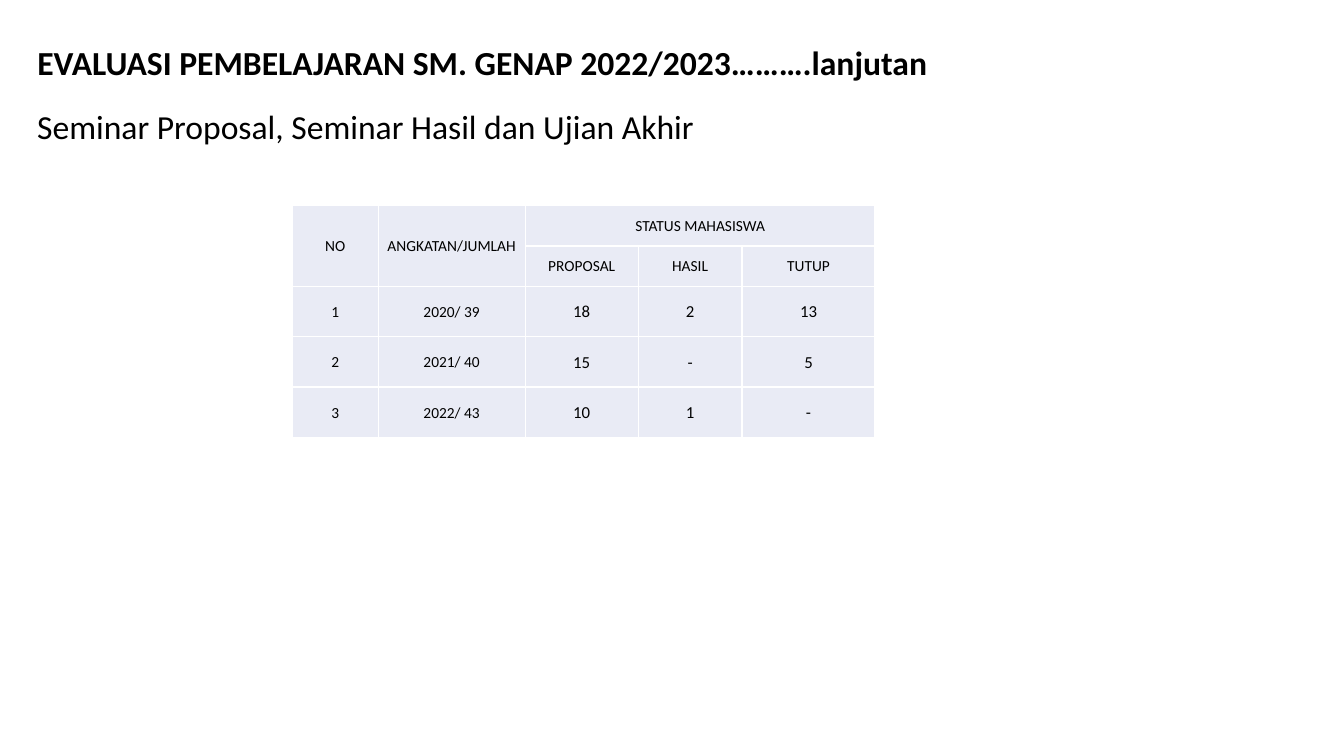
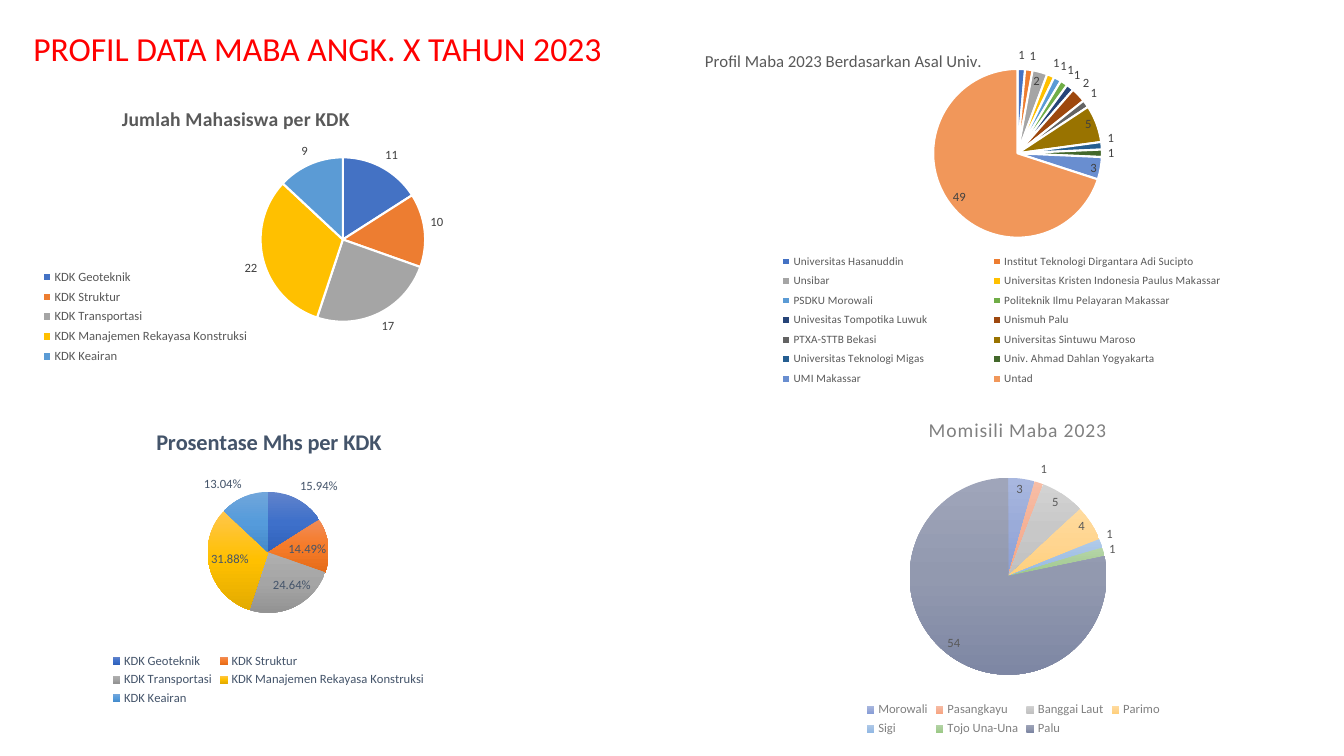
"""Build two slides: a seminar status table and four student profile pies."""
import dataclasses
import typing

import pptx
import pptx.chart.data
import pptx.dml.color
import pptx.enum.chart
import pptx.enum.text
import pptx.oxml
import pptx.oxml.ns
import pptx.util

Inches = pptx.util.Inches
Pt = pptx.util.Pt
Text = pptx.enum.text
Place = pptx.enum.chart.XL_LABEL_POSITION
Box = tuple[float, float, float, float]


@dataclasses.dataclass(frozen=True)
class Theme:
    font: str = "Calibri"
    black: str = "000000"
    white: str = "FFFFFF"
    red: str = "FF0000"
    cell: str = "E9EBF5"
    dark: str = "404040"
    gray: str = "595959"
    slate: str = "44546A"
    pale: str = "808080"
    head: float = 24
    label: float = 9
    small: float = 11
    value: float = 12


@dataclasses.dataclass(frozen=True)
class Pie:
    title: str
    box: Box
    names: tuple[str, ...]
    vals: tuple[float, ...]
    fills: tuple[str, ...]
    plot: Box
    spot: tuple[float, float]
    size: float
    ink: str
    tag: str
    bold: bool = False
    space: int = 0
    key: Box | None = None
    keysize: float = 9
    form: str = "0"
    pos: typing.Any = Place.BEST_FIT
    edge: bool = False


THEME = Theme()
KDK = ("KDK Geoteknik", "KDK Struktur", "KDK Transportasi",
       "KDK Manajemen Rekayasa Konstruksi", "KDK Keairan")
BASE = ("4472C4", "ED7D31", "A5A5A5", "FFC000", "5B9BD5")

PIES = (
    Pie("Jumlah Mahasiswa per KDK", (0.16, 0.86, 4.41, 2.89), KDK,
        (11, 10, 17, 22, 9), BASE, (0.55, 0.22, 0.37, 0.61), (0.23, 0.05),
        14, THEME.gray, THEME.dark, bold=True, key=(0.05, 0.61, 0.48, 0.36),
        pos=Place.OUTSIDE_END, edge=True),
    Pie("Prosentase Mhs per KDK", (0.16, 4.04, 5, 3), KDK,
        (0.1594, 0.1449, 0.2464, 0.3188, 0.1304),
        ("6183CB 3E70CA 3062BB", "F18C57 F67B28 E56C19",
         "AFAFAF A5A5A5 939393", "FFC64B FFC000 E3AB00",
         "71A6DB 559BDB 448ACA"),
        (0.38, 0.28, 0.24, 0.4), (0.27, 0.05), 16, THEME.slate, THEME.slate,
        bold=True, form="0.00%"),
    Pie("Profil Maba 2023 Berdasarkan Asal Univ.", (6.9, 0.32, 6.2, 3.64),
        ("Universitas Hasanuddin", "Institut Teknologi Dirgantara Adi Sucipto",
         "Unsibar", "Universitas Kristen Indonesia Paulus Makassar",
         "PSDKU Morowali", "Politeknik Ilmu Pelayaran Makassar",
         "Univesitas Tompotika Luwuk", "Unismuh Palu", "PTXA-STTB Bekasi",
         "Universitas Sintuwu Maroso", "Universitas Teknologi Migas",
         "Univ. Ahmad Dahlan Yogyakarta", "UMI Makassar", "Untad"),
        (1, 1, 2, 1, 1, 1, 1, 2, 1, 5, 1, 1, 3, 49),
        BASE + ("70AD47", "264478", "9E480E", "636363", "997300", "255E91",
                "43682B", "698ED0", "F1975A"),
        (0.09, 0.1, 0.85, 0.46), (0.01, 0.04), 12, THEME.gray, THEME.dark,
        key=(0.04, 0.59, 0.9, 0.39), keysize=8, edge=True),
    Pie("Momisili Maba 2023", (7.48, 3.96, 5.14, 3.38),
        ("Morowali", "Pasangkayu", "Banggai Laut", "Parimo", "Sigi",
         "Tojo Una-Una", "Palu"),
        (3, 1, 5, 4, 1, 1, 54),
        ("A8B7DF 9AABD9 889ED7", "F7BDA5 F5B196 F8A582",
         "D2D2D2 C8C8C8 C0C0C0", "FFDB9E FFD590 FFD07C",
         "B1CBE9 A3C1E5 93B9E4", "B5D5A7 AACE9A 9CC987",
         "9FA5BA 9299AF 7E87A4"),
        (0.3, 0.23, 0.38, 0.58), (0.33, 0.04), 14, THEME.pale, THEME.gray,
        space=50, form="General"),
)

COLS = (0.85, 1.46, 1.12, 1.03, 1.32)
ROWS = (0.4, 0.4, 0.5, 0.5, 0.5)
CELLS = (
    ("NO", "ANGKATAN/JUMLAH", "STATUS MAHASISWA", "", ""),
    ("", "", "PROPOSAL", "HASIL", "TUTUP"),
    ("1", "2020/ 39", "18", "2", "13"),
    ("2", "2021/ 40", "15", "-", "5"),
    ("3", "2022/ 43", "10", "1", "-"),
)
SPANS = (((0, 0), (1, 0)), ((0, 1), (1, 1)), ((0, 2), (0, 4)))


def rgb(code: str) -> pptx.dml.color.RGBColor:
    """Turn a hex code into a colour."""
    return pptx.dml.color.RGBColor.from_string(code)


def apply(item: typing.Any, values: dict[str, typing.Any]) -> None:
    """Set each format value on an object."""
    for name, value in values.items():
        setattr(item, name, value)


def ink(font: typing.Any, size: float, code: str, bold: bool = False) -> None:
    """Format a font."""
    apply(font, {"name": THEME.font, "size": Pt(size), "bold": bold})
    font.color.rgb = rgb(code)


def area(box: Box) -> tuple[int, ...]:
    """Convert a box to lengths."""
    return tuple(Inches(side) for side in box)


def write(shape: typing.Any, text: str, box: Box, code: str,
          bold: bool = False, gap: float = 0,
          anchor: typing.Any = Text.MSO_ANCHOR.MIDDLE) -> None:
    """Place and fill a heading."""
    apply(shape, dict(zip(("left", "top", "width", "height"), area(box))))
    frame = shape.text_frame
    frame.text = text
    apply(frame, {"word_wrap": True, "vertical_anchor": anchor,
                  "auto_size": Text.MSO_AUTO_SIZE.NONE})
    line = frame.paragraphs[0]
    apply(line, {"alignment": Text.PP_ALIGN.LEFT, "line_spacing": 0.9,
                 "space_before": Pt(gap)})
    ink(line.runs[0].font, THEME.head, code, bold)


def start(deck: typing.Any, text: str, box: Box, code: str,
          bold: bool = False) -> typing.Any:
    """Add a slide with its title."""
    slide = deck.slides.add_slide(deck.slide_layouts.get_by_name("Title Only"))
    write(slide.shapes.title, text, box, code, bold)
    return slide


def border(props: typing.Any) -> None:
    """Draw white borders around a cell."""
    space = pptx.oxml.ns.nsdecls("a")
    for spot, side in enumerate("LRTB"):
        props.insert(spot, pptx.oxml.parse_xml(
            f'<a:ln{side} {space} w="12700"><a:solidFill>'
            f'<a:srgbClr val="{THEME.white}"/></a:solidFill></a:ln{side}>'))


def grid(slide: typing.Any) -> None:
    """Draw the status table."""
    box = area((2.9, 2.04, sum(COLS), sum(ROWS)))
    frame = slide.shapes.add_table(len(ROWS), len(COLS), *box)
    table = frame.table
    apply(table, {"first_row": False, "horz_banding": False})
    for col, width in zip(table.columns, COLS):
        col.width = Inches(width)
    for row, height in zip(table.rows, ROWS):
        row.height = Inches(height)
    for first, last in SPANS:
        table.cell(*first).merge(table.cell(*last))
    pad = Inches(0.01)
    for y, words in enumerate(CELLS):
        for x, word in enumerate(words):
            cell = table.cell(y, x)
            apply(cell, {"margin_left": pad, "margin_right": pad,
                         "margin_top": pad, "margin_bottom": 0,
                         "vertical_anchor": Text.MSO_ANCHOR.MIDDLE})
            cell.fill.solid()
            cell.fill.fore_color.rgb = rgb(THEME.cell)
            line = cell.text_frame.paragraphs[0]
            line.text = word
            line.alignment = Text.PP_ALIGN.CENTER
            size = THEME.value if y > 1 and x > 1 else THEME.small
            ink(line.font, size, THEME.black)
    for props in frame.element.xpath(".//a:tcPr"):
        border(props)


def layout(part: typing.Any, spot: int, box: tuple[float, ...],
           inner: bool = False) -> None:
    """Fix the place of a chart part."""
    for old in part.xpath("c:layout"):
        part.remove(old)
    target = '<c:layoutTarget val="inner"/>' if inner else ""
    modes = "".join(f'<c:{name}Mode val="edge"/>' for name in "xy")
    sides = "".join(f'<c:{name} val="{side}"/>' for name, side in zip("xywh", box))
    part.insert(spot, pptx.oxml.parse_xml(
        f'<c:layout {pptx.oxml.ns.nsdecls("c")}><c:manualLayout>'
        f'{target}{modes}{sides}</c:manualLayout></c:layout>'))


def paint(chart: typing.Any, point: typing.Any, codes: list[str]) -> None:
    """Fill a slice with one colour or a three-stop gradient."""
    fill = point.format.fill
    if len(codes) == 1:
        fill.solid()
        fill.fore_color.rgb = rgb(codes[0])
        return
    fill.gradient()
    fill.gradient_angle = 270
    stops = chart.element.xpath(".//a:gsLst")[-1]
    stops.insert(1, pptx.oxml.parse_xml(
        f'<a:gs {pptx.oxml.ns.nsdecls("a")} pos="50000">'
        f'<a:srgbClr val="{codes[1]}"/></a:gs>'))
    for stop, code in zip(fill.gradient_stops, codes):
        stop.color.rgb = rgb(code)


def draw(slide: typing.Any, pie: Pie) -> None:
    """Draw a pie chart."""
    data = pptx.chart.data.CategoryChartData()
    data.categories = pie.names
    data.add_series("Series 1", pie.vals)
    kind = pptx.enum.chart.XL_CHART_TYPE.PIE
    chart = slide.shapes.add_chart(kind, *area(pie.box), data).chart
    ink(chart.font, 10, THEME.black)
    apply(chart, {"has_title": True, "has_legend": True})
    frame = chart.chart_title.text_frame
    frame.text = pie.title
    ink(frame.paragraphs[0].runs[0].font, pie.size, pie.ink, pie.bold)
    if pie.space:
        chart.element.xpath("c:chart/c:title//a:rPr")[0].set("spc", str(pie.space))
    apply(chart.legend, {"include_in_layout": False,
                         "position": pptx.enum.chart.XL_LEGEND_POSITION.BOTTOM})
    ink(chart.legend.font, pie.keysize, pie.ink)
    plot = chart.plots[0]
    apply(plot, {"vary_by_categories": True, "has_data_labels": True})
    apply(plot.data_labels, {"show_value": True, "show_percentage": False,
                             "position": pie.pos, "number_format": pie.form,
                             "number_format_is_linked": False})
    ink(plot.data_labels.font, THEME.label, pie.tag)
    for spot, codes in enumerate(pie.fills):
        point = plot.series[0].points[spot]
        paint(chart, point, codes.split())
        line = point.format.line
        if pie.edge:
            line.color.rgb = rgb(THEME.white)
            line.width = Pt(1.5)
        else:
            line.fill.background()
    root = chart.element
    layout(root.xpath("c:chart/c:plotArea")[0], 0, pie.plot, True)
    layout(root.xpath("c:chart/c:title")[0], 1, pie.spot)
    if pie.key:
        layout(root.xpath("c:chart/c:legend")[0], 1, pie.key)


def main() -> None:
    """Build and save the deck."""
    deck = pptx.Presentation()
    apply(deck, {"slide_width": Inches(13.33), "slide_height": Inches(7.5)})
    slide = start(deck, "EVALUASI PEMBELAJARAN SM. GENAP 2022/2023……….lanjutan",
                  (0.27, 0.23, 11.59, 0.83), THEME.black, True)
    body = (0.27, 1.05, 12.71, 6.22)
    write(slide.shapes.add_textbox(*area(body)),
          "Seminar Proposal, Seminar Hasil dan Ujian Akhir", body, THEME.black,
          gap=10, anchor=Text.MSO_ANCHOR.TOP)
    grid(slide)
    slide = start(deck, "PROFIL DATA MABA ANGK. X TAHUN 2023",
                  (0.23, 0.16, 11.5, 0.69), THEME.red)
    for pie in PIES:
        draw(slide, pie)
    deck.save("out.pptx")


if __name__ == "__main__":
    main()
